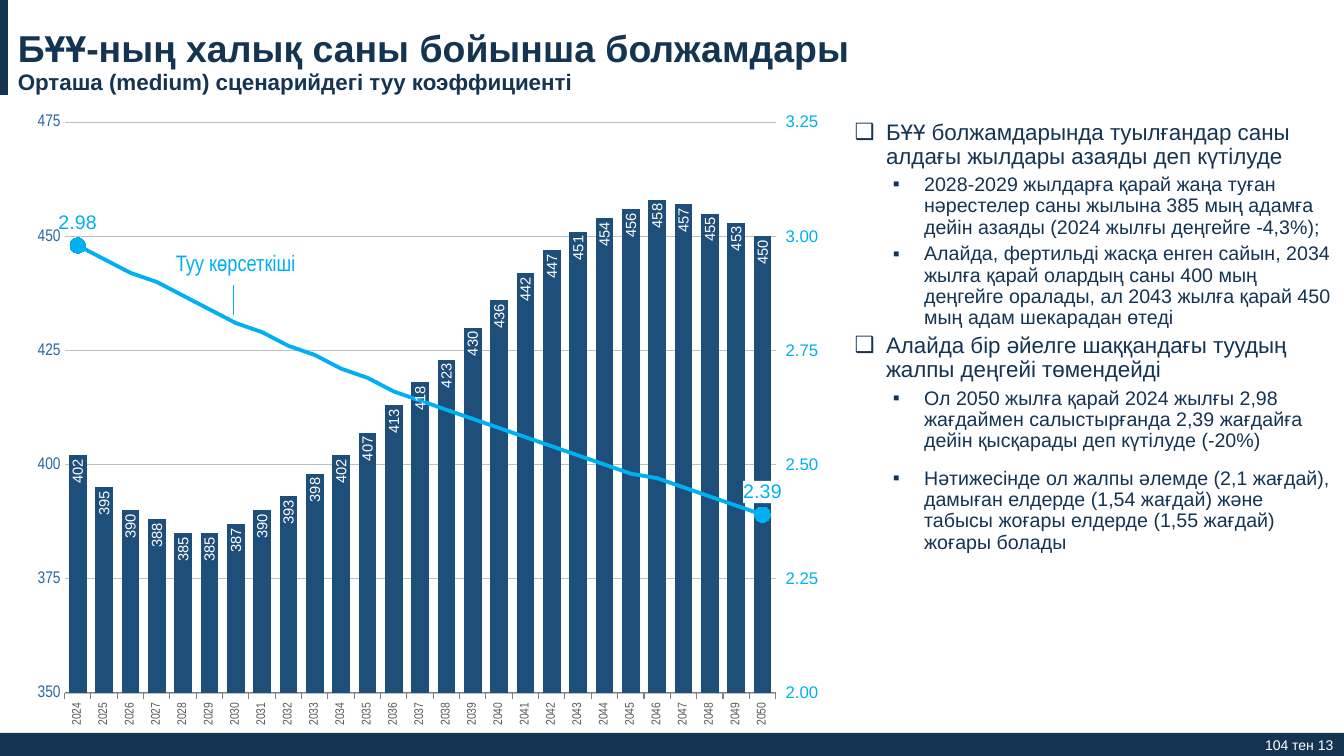
from copy import deepcopy

from lxml.etree import SubElement
from pptx import Presentation
from pptx.chart.axis import ValueAxis
from pptx.chart.data import CategoryChartData
from pptx.dml.color import RGBColor
from pptx.enum.chart import (XL_CHART_TYPE, XL_LABEL_POSITION, XL_MARKER_STYLE,
                             XL_TICK_LABEL_POSITION, XL_TICK_MARK)
from pptx.enum.shapes import MSO_CONNECTOR, MSO_SHAPE
from pptx.enum.text import MSO_ANCHOR, PP_ALIGN
from pptx.oxml import parse_xml
from pptx.oxml.ns import nsdecls, qn
from pptx.util import Cm, Pt

NAVY, BAR, AXIS, SKY, WHITE = "143452", "1E4E7A", "2868A3", "00B0F0", "FFFFFF"
W, H = 33.87, 19.05
HEAD_H, FOOT_H = 2.39, 0.58

BIRTHS = [402, 395, 390, 388, 385, 385, 387, 390, 393, 398, 402, 407, 413, 418,
          423, 430, 436, 442, 447, 451, 454, 456, 458, 457, 455, 453, 450]
FERTILITY = [2.98, 2.95, 2.92, 2.9, 2.87, 2.84, 2.81, 2.79, 2.76, 2.74, 2.71, 2.69,
             2.66, 2.64, 2.62, 2.6, 2.58, 2.56, 2.54, 2.52, 2.5, 2.48, 2.47, 2.45,
             2.43, 2.41, 2.39]

# level, space after, text
POINTS = [
    (0, 4, "БҰҰ болжамдарында туылғандар саны алдағы жылдары азаяды деп күтілуде"),
    (1, 4, "2028-2029 жылдарға қарай жаңа туған нәрестелер саны жылына 385 мың адамға "
           "дейін азаяды (2024 жылғы деңгейге -4,3%);"),
    (1, 4, "Алайда, фертильді жасқа енген сайын, 2034 жылға қарай олардың саны 400 мың "
           "деңгейге оралады, ал 2043 жылға қарай 450 мың адам шекарадан өтеді"),
    (0, 4, "Алайда бір әйелге шаққандағы туудың жалпы деңгейі төмендейді"),
    (1, 12, "Ол 2050 жылға қарай 2024 жылғы 2,98 жағдаймен салыстырғанда 2,39 жағдайға "
            "дейін қысқарады деп күтілуде (-20%)"),
    (1, 12, "Нәтижесінде ол жалпы әлемде (2,1 жағдай), дамыған елдерде (1,54 жағдай) "
            "және табысы жоғары елдерде (1,55 жағдай) жоғары болады"),
]
LEVELS = [dict(bullet="❑", indent=0.79, size=16), dict(bullet="▪", indent=1.75, size=14)]


def rgb(hex_color):
    return RGBColor.from_string(hex_color)


def set_attrs(obj, **values):
    for name, value in values.items():
        setattr(obj, name, value)


def set_font(font, size, color, name="Arial", bold=False):
    set_attrs(font, size=Pt(size), name=name, bold=bold)
    font.color.rgb = rgb(color)


def set_line(line, color, width):
    line.color.rgb = rgb(color)
    line.width = Pt(width)


def add_bar(s, x, y, w, h):
    sp = s.shapes.add_shape(MSO_SHAPE.RECTANGLE, Cm(x), Cm(y), Cm(w), Cm(h))
    sp.shadow.inherit = False
    sp.fill.solid()
    sp.fill.fore_color.rgb = rgb(NAVY)
    sp.line.fill.background()


def add_frame(s, x, y, w, h, anchor=MSO_ANCHOR.MIDDLE):
    tf = s.shapes.add_textbox(Cm(x), Cm(y), Cm(w), Cm(h)).text_frame
    set_attrs(tf, word_wrap=True, vertical_anchor=anchor)
    return tf


def add_label(s, box, text, size, color, name="Arial", bold=False, align=PP_ALIGN.LEFT):
    tf = add_frame(s, *box)
    p = tf.paragraphs[0]
    p.alignment = align
    r = p.add_run()
    r.text = text
    set_font(r.font, size, color, name, bold)
    return tf


def add_header(s, x, y, w, h):
    add_bar(s, x, y, 0.2, h)
    add_label(s, (x + 0.2, y, w - 0.2, h), "БҰҰ-ның халық саны бойынша болжамдары",
              26.7, NAVY, bold=True)
    add_label(s, (x + 0.2, y + 1.47, 22.38, 1.19),
              "Орташа (medium) сценарийдегі туу коэффициенті", 16, NAVY, bold=True)


def add_footer(s, x, y, w, h):
    add_bar(s, x, y, w, h)
    tf = add_label(s, (x + w - 3.29, y, 3.02, h), "104 тен 13", 10, WHITE,
                   align=PP_ALIGN.RIGHT)
    tf.margin_right = 0


def add_points(s, x, y, w, h):
    tf = add_frame(s, x, y, w, h, MSO_ANCHOR.TOP)
    for i, (level, after, text) in enumerate(POINTS):
        p = tf.paragraphs[0] if i == 0 else tf.add_paragraph()
        style = LEVELS[level]
        pPr = p._p.get_or_add_pPr()
        pPr.set("marL", str(Cm(style["indent"])))
        pPr.set("indent", str(-Cm(0.79)))
        SubElement(pPr, qn("a:buFont"), typeface="Arial")
        SubElement(pPr, qn("a:buChar"), char=style["bullet"])
        set_attrs(p, line_spacing=0.9, space_after=Pt(after))
        r = p.add_run()
        r.text = text
        set_font(r.font, style["size"], NAVY)


def rotate_up(parent):
    parent.find(qn("c:txPr")).find(qn("a:bodyPr")).set("rot", "-5400000")


def format_value_axis(axis, low, high, step, fmt, color, name):
    set_attrs(axis, minimum_scale=low, maximum_scale=high, major_unit=step,
              minor_tick_mark=XL_TICK_MARK.NONE, major_tick_mark=XL_TICK_MARK.NONE)
    set_attrs(axis.tick_labels, number_format=fmt, number_format_is_linked=False)
    set_font(axis.tick_labels.font, 12, color, name)
    axis.format.line.fill.background()


def move_to_right_axis(chart):
    """Turn the second bar series into a line on its own right-hand axis."""
    bars = chart.plots[0]._element
    ser = bars.findall(qn("c:ser"))[1]
    for node in ser.findall(qn("c:invertIfNegative")):
        ser.remove(node)
    line = parse_xml(f'<c:lineChart {nsdecls("c")}><c:grouping val="standard"/>'
                     '<c:varyColors val="0"/><c:marker val="1"/>'
                     '<c:axId val="5001"/><c:axId val="5002"/></c:lineChart>')
    line.insert(2, ser)
    bars.addnext(line)
    last = chart.value_axis._element
    copies = [deepcopy(last), deepcopy(chart.category_axis._element)]
    changes = [dict(axId="5002", crossAx="5001", axPos="r", crosses="max"),
               dict(axId="5001", crossAx="5002", delete="1")]
    for axis, values in zip(copies, changes):
        for tag, value in values.items():
            axis.find(qn(f"c:{tag}")).set("val", value)
        last.addnext(axis)
        last = axis
    return ValueAxis(copies[0])


def format_births(plot):
    set_attrs(plot, gap_width=50, vary_by_categories=False)
    ser = plot.series[0]
    ser.format.fill.solid()
    ser.format.fill.fore_color.rgb = rgb(BAR)
    labels = ser.data_labels
    set_attrs(labels, show_value=True, position=XL_LABEL_POSITION.INSIDE_END,
              number_format="#,##0", number_format_is_linked=False)
    set_font(labels.font, 10.5, WHITE)
    rotate_up(labels._element)


def format_fertility(ser):
    ser.smooth = False
    set_line(ser.format.line, SKY, 2.75)
    ser.marker.style = XL_MARKER_STYLE.NONE
    ser.data_labels.show_value = False
    for i in (0, len(FERTILITY) - 1):
        point = ser.points[i]
        set_attrs(point.marker, style=XL_MARKER_STYLE.CIRCLE, size=11)
        point.marker.format.fill.solid()
        point.marker.format.fill.fore_color.rgb = rgb(SKY)
        set_line(point.marker.format.line, SKY, 0.75)
        set_line(point.format.line, SKY, 2.75)
        set_font(point.data_label.font, 14, SKY)
        point.data_label.position = XL_LABEL_POSITION.ABOVE
    # White backing for the last label, which lies over a bar
    txPr = ser._element.findall(".//" + qn("c:dLbl"))[-1].find(qn("c:txPr"))
    txPr.addprevious(parse_xml(f'<c:spPr {nsdecls("c", "a")}><a:solidFill>'
                               f'<a:srgbClr val="{WHITE}"/></a:solidFill></c:spPr>'))


def set_plot_box(chart, **box):
    area = chart._chartSpace.chart.plotArea
    for old in area.findall(qn("c:layout")):
        area.remove(old)
    sizes = "".join(f'<c:{k} val="{v}"/>' for k, v in box.items())
    area.insert(0, parse_xml(
        f'<c:layout {nsdecls("c")}><c:manualLayout><c:layoutTarget val="inner"/>'
        f'<c:xMode val="edge"/><c:yMode val="edge"/>{sizes}</c:manualLayout></c:layout>'))


def add_forecast(s, x, y, w, h):
    data = CategoryChartData()
    data.categories = [str(2024 + i) for i in range(len(BIRTHS))]
    data.add_series("Туылғандар саны", BIRTHS)
    data.add_series("Туу көрсеткіші", FERTILITY)
    chart = s.shapes.add_chart(XL_CHART_TYPE.COLUMN_CLUSTERED, Cm(x), Cm(y), Cm(w), Cm(h),
                               data).chart
    set_attrs(chart, has_legend=False, has_title=False)
    set_font(chart.font, 10, "000000")
    years, left = chart.category_axis, chart.value_axis
    right = move_to_right_axis(chart)
    # Axes
    format_value_axis(left, 350, 475, 25, "#,##0", AXIS, "Arial Narrow")
    left.has_major_gridlines = True
    set_line(left.major_gridlines.format.line, "BFBFBF", 0.25)
    format_value_axis(right, 2, 3.25, 0.25, "#,##0.00", SKY, "Arial")
    set_attrs(right, has_major_gridlines=False, major_tick_mark=XL_TICK_MARK.OUTSIDE)
    set_attrs(years, major_tick_mark=XL_TICK_MARK.OUTSIDE,
              tick_label_position=XL_TICK_LABEL_POSITION.LOW)
    set_font(years.tick_labels.font, 9, "595959", "Arial Narrow")
    set_line(years.format.line, "808080", 0.75)
    rotate_up(years._element)
    # Series
    format_births(chart.plots[0])
    format_fertility(chart.plots[1].series[0])
    set_plot_box(chart, x=0.063, y=0.026, w=0.87, h=0.91)
    # Name of the line, with its leader
    add_label(s, (x + 3.35, y + 3.63, 4.52, 0.61), "Туу көрсеткіші", 16, SKY,
              "Arial Narrow", align=PP_ALIGN.CENTER)
    leader = s.shapes.add_connector(MSO_CONNECTOR.STRAIGHT, Cm(x + 5.56), Cm(y + 5.28),
                                    Cm(x + 5.56), Cm(y + 4.52))
    set_line(leader.line, SKY, 0.75)
    SubElement(leader._element.spPr, qn("a:effectLst"))


def main():
    prs = Presentation()
    set_attrs(prs, slide_width=Cm(W), slide_height=Cm(H))
    s = prs.slides.add_slide(prs.slide_layouts[6])
    add_footer(s, 0, H - FOOT_H, W, FOOT_H)
    add_header(s, 0, 0, W, HEAD_H)
    add_forecast(s, 0.33, 2.67, 20.6, 15.8)
    add_points(s, 21.29, 2.92, 12.57, 15.27)
    prs.save("out.pptx")


if __name__ == "__main__":
    main()
